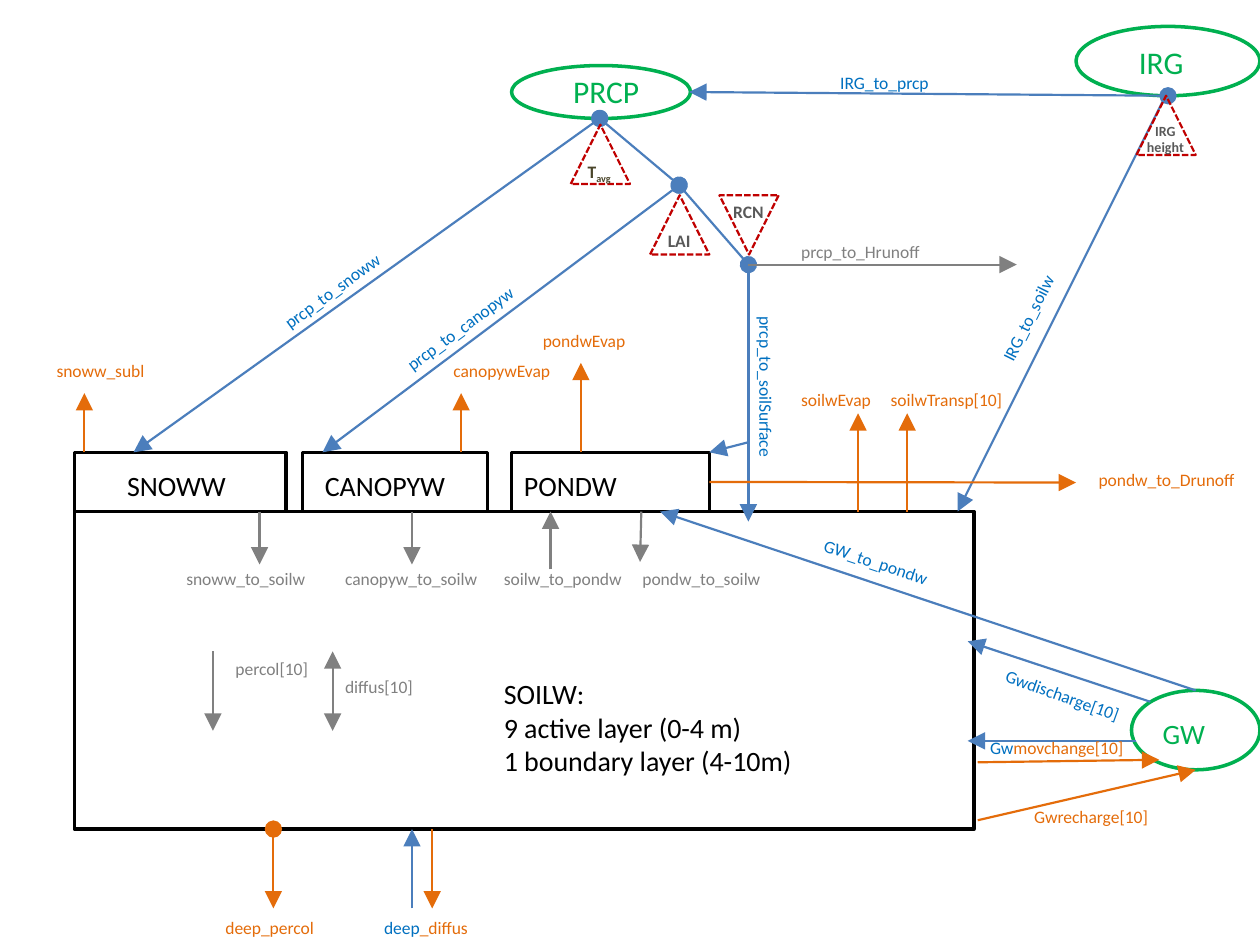
from dataclasses import dataclass

from lxml.etree import SubElement
from pptx import Presentation
from pptx.dml.color import RGBColor
from pptx.enum.dml import MSO_LINE
from pptx.enum.shapes import MSO_CONNECTOR, MSO_SHAPE as Shape
from pptx.enum.text import MSO_AUTO_SIZE, PP_ALIGN
from pptx.oxml.ns import qn
from pptx.util import Inches, Pt


@dataclass(frozen=True)
class Theme:
    font: str = "Calibri"
    black: str = "000000"
    green: str = "00B050"
    flow: str = "4B7EBC"
    blue: str = "0070C0"
    orange: str = "E46C0A"
    gray: str = "808080"
    dark: str = "595959"
    olive: str = "4A452A"
    red: str = "C00000"
    source: int = 18
    store: int = 16
    label: int = 10
    small: int = 8
    thick: float = 2
    thin: float = 1.25


T = Theme()


def add_outline(s, kind, box, color, width=T.thick):
    sp = s.shapes.add_shape(kind, *map(Inches, box))
    sp.shadow.inherit = False
    sp.fill.background()
    sp.line.color.rgb = RGBColor.from_string(color)
    sp.line.width = Pt(width)
    return sp


def add_condition(s, x, y, rotation=0):
    sp = add_outline(s, Shape.ISOSCELES_TRIANGLE, (x, y, 0.47, 0.47), T.red, T.thin)
    sp.line.dash_style = MSO_LINE.SQUARE_DOT
    sp.rotation = rotation


def style_run(r, color, size, bold=False):
    r.font.name = T.font
    r.font.size = Pt(size)
    r.font.bold = bold
    r.font.color.rgb = RGBColor.from_string(color)


def add_text(s, text, box, color, size=T.label, bold=False, rotation=0):
    sp = s.shapes.add_textbox(*map(Inches, box))
    sp.rotation = rotation
    tf = sp.text_frame
    tf.word_wrap = True
    tf.auto_size = MSO_AUTO_SIZE.SHAPE_TO_FIT_TEXT
    tf.text = text
    for p in tf.paragraphs:
        p.alignment = PP_ALIGN.CENTER if bold else PP_ALIGN.LEFT
        for r in p.runs:
            style_run(r, color, size, bold)
    return tf.paragraphs[0]


def add_tail_run(p, text, color, bold=False):
    r = p.add_run()
    r.text = text
    style_run(r, color, T.label, bold)
    return r


def add_flow(s, start, end, color, head=None, tail="triangle"):
    line = s.shapes.add_connector(MSO_CONNECTOR.STRAIGHT, *map(Inches, start + end))
    line.line.color.rgb = RGBColor.from_string(color)
    line.line.width = Pt(T.thin)
    ln = line.line._get_or_add_ln()
    for tag, kind in (("a:headEnd", head), ("a:tailEnd", tail)):
        if kind:
            SubElement(ln, qn(tag), type=kind, w="lg", len="lg")
    SubElement(line._element.spPr, qn("a:effectLst"))
    return line


def add_stores(s):
    top, soil_top = 3.59, 4.06
    add_outline(s, Shape.RECTANGLE, (0.59, soil_top, 7.14, 2.52), T.black)
    for name, x, width, text_x in (
        ("SNOWW", 0.59, 1.68, 0.91),
        ("CANOPYW", 2.4, 1.47, 2.48),
        ("PONDW", 4.06, 1.57, 4.06),
    ):
        store = add_outline(s, Shape.RECTANGLE, (x, top, width, soil_top - top), T.black)
        add_text(s, name, (text_x, 3.67, 1.68, 0.37), T.black, T.store)
    add_text(s, "SOILW:\n9 active layer (0-4 m)\n1 boundary layer (4-10m)",
             (3.9, 5.32, 3.23, 0.91), T.black, T.store)
    return store


def add_sources(s):
    for name, oval, text_box, size in (
        ("PRCP", (4.06, 0.52, 1.42, 0.42), (4.45, 0.52, 0.87, 0.4), T.source),
        ("IRG", (8.54, 0.21, 1.46, 0.55), (8.94, 0.29, 0.84, 0.4), T.source),
        ("GW", (8.98, 5.48, 1.02, 0.63), (9.13, 5.64, 0.87, 0.37), T.store),
    ):
        add_outline(s, Shape.OVAL, oval, T.green)
        add_text(s, name, text_box, T.green, size)


def add_conditions(s):
    for x, y, rotation in ((4.53, 0.99, 0), (5.16, 1.55, 0), (9.02, 0.76, 0), (5.71, 1.55, 180)):
        add_condition(s, x, y, rotation)
    p = add_text(s, "T", (4.53, 1.23, 0.47, 0.27), T.olive, bold=True)
    r = add_tail_run(p, "avg ", T.olive, True)
    r.font._element.set("baseline", "-25000")
    add_text(s, "LAI", (4.92, 1.78, 0.94, 0.27), T.dark, bold=True)
    add_text(s, "RCN", (5.47, 1.55, 0.94, 0.27), T.dark, bold=True)
    add_text(s, "IRG\nheight", (8.78, 0.92, 0.94, 0.37), T.dark, T.small, True)


def add_flows(s, pond):
    prcp, canopy, runoff, split = (4.76, 0.94), (5.39, 1.47), (5.94, 2.1), (5.94, 3.51)
    for start, end, head, tail in (
        (prcp, (1.06, 3.59), "oval", "triangle"),
        (prcp, canopy, "oval", "oval"),
        (canopy, (2.56, 3.59), None, "triangle"),
        (canopy, runoff, "oval", "oval"),
        (runoff, split, None, None),
        (split, (5.63, 3.59), None, "triangle"),
        (split, (5.94, 4.14), None, "triangle"),
        ((9.27, 0.76), (5.47, 0.73), "oval", "triangle"),
        ((9.25, 0.76), (7.6, 4.06), None, "triangle"),
        ((9.02, 5.88), (7.68, 5.88), None, "triangle"),
        ((9.49, 5.48), (5.24, 4.06), None, "triangle"),
        ((9.13, 5.57), (7.68, 5.09), None, "triangle"),
        ((3.27, 7.21), (3.27, 6.58), None, "triangle"),
    ):
        add_flow(s, start, end, T.flow, head, tail)

    for color, x, start_y, end_y, head in (
        (T.orange, 0.67, 3.59, 3.12, None),
        (T.orange, 3.66, 3.59, 3.12, None),
        (T.orange, 4.61, 3.59, 2.88, None),
        (T.orange, 6.81, 4.06, 3.28, None),
        (T.orange, 7.2, 4.06, 3.28, None),
        (T.orange, 2.17, 6.58, 7.21, "oval"),
        (T.orange, 3.43, 6.58, 7.21, None),
        (T.gray, 2.06, 4.06, 4.48, None),
        (T.gray, 3.27, 4.06, 4.48, None),
        (T.gray, 4.37, 4.52, 4.06, None),
        (T.gray, 1.69, 5.17, 5.8, None),
        (T.gray, 2.64, 5.17, 5.8, "triangle"),
    ):
        add_flow(s, (x, start_y), (x, end_y), color, head)

    add_flow(s, (5.09, 4.06), (5.08, 4.46), T.gray)
    add_flow(s, runoff, (8.07, 2.1), T.gray)
    add_flow(s, (7.76, 6.51), (9.49, 6.11), T.orange)
    add_flow(s, (7.76, 6.05), (9.2, 6.03), T.orange)
    add_flow(s, (5.63, 3.83), (8.54, 3.83), T.orange).begin_connect(pond, 3)


def add_labels(s):
    labels = {
        T.orange: (("snoww_subl", 0.35, 2.81), ("canopywEvap", 3.5, 2.81),
                   ("pondwEvap", 4.21, 2.57), ("soilwEvap", 6.26, 3.04),
                   ("soilwTransp[10]", 6.97, 3.04), ("deep_percol", 1.69, 7.23),
                   ("Gwrecharge[10]", 8.11, 6.35), ("pondw_to_Drunoff", 8.62, 3.67)),
        T.gray: (("snoww_to_soilw", 1.38, 4.46), ("canopyw_to_soilw", 2.64, 4.46),
                 ("soilw_to_pondw", 3.9, 4.46), ("pondw_to_soilw", 5, 4.46),
                 ("prcp_to_Hrunoff", 6.26, 1.86), ("percol[10]", 1.77, 5.17),
                 ("diffus[10]", 2.64, 5.32)),
    }
    for color, items in labels.items():
        for text, x, y in items:
            add_text(s, text, (x, y, 1.89, 0.27), color)
    for text, x, y, width, rotation in (
        ("prcp_to_snoww", 2.01, 1.94, 1.89, 323.7),
        ("prcp_to_canopyw", 2.98, 2.27, 1.89, 323.5),
        ("prcp_to_soilSurface", 5.37, 2.99, 1.42, 90),
        ("GW_to_pondw", 6.42, 4.36, 1.27, 18.6),
        ("Gwdischarge[10]", 7.84, 5.51, 1.89, 19.8),
        ("IRG_to_soilw", 7.66, 2.34, 1.05, 296.4),
        ("IRG_to_prcp", 6.57, 0.52, 1.05, 0),
    ):
        add_text(s, text, (x, y, width, 0.27), T.blue, rotation=rotation)
    for first, rest, x, y in (("deep", "_diffus", 2.95, 7.23), ("Gw", "movchange[10]", 7.76, 5.8)):
        add_tail_run(add_text(s, first, (x, y, 1.89, 0.27), T.blue), rest, T.orange)


def main():
    prs = Presentation()
    prs.slide_width, prs.slide_height = Inches(10), Inches(7.5)
    s = prs.slides.add_slide(prs.slide_layouts[6])
    pond = add_stores(s)
    add_sources(s)
    add_flows(s, pond)
    add_conditions(s)
    add_labels(s)
    prs.save("out.pptx")


if __name__ == "__main__":
    main()
